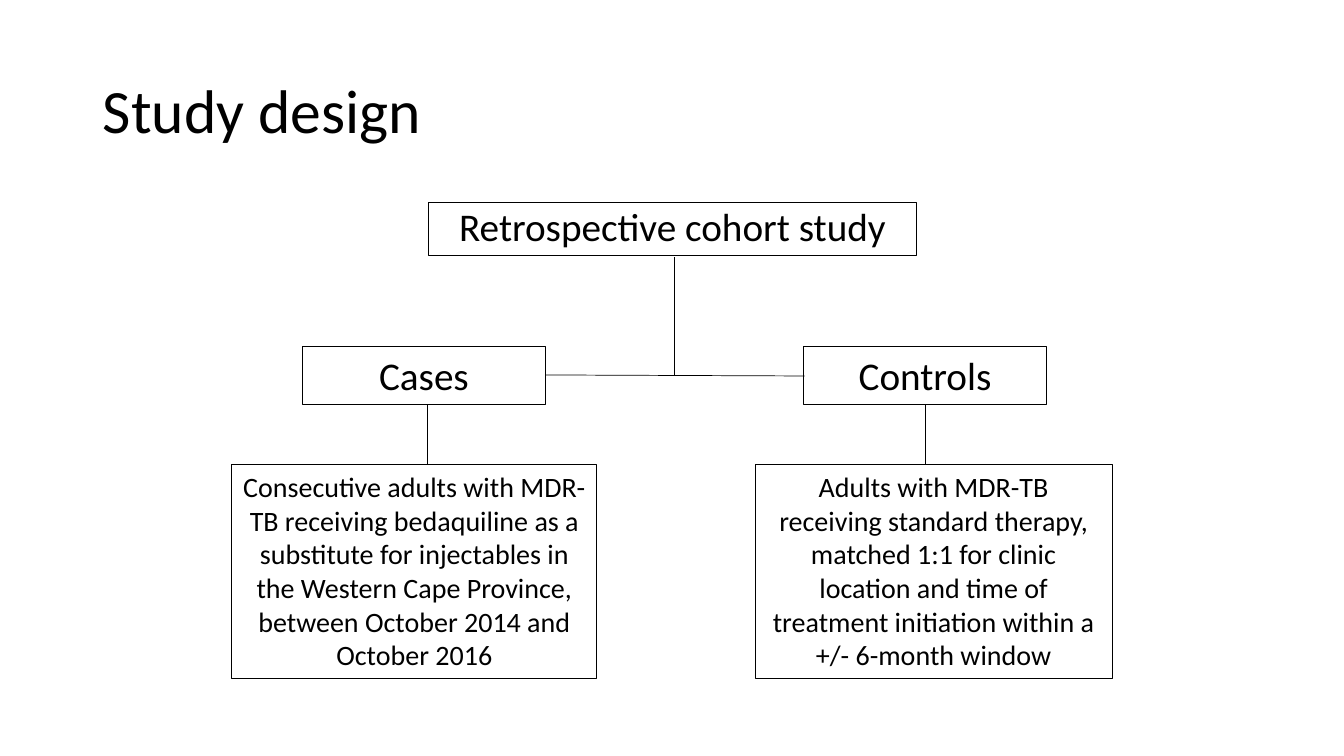
"""Build the study design slide with its cohort diagram."""
from lxml import etree
from pptx import Presentation
from pptx.dml.color import RGBColor
from pptx.enum.shapes import MSO_CONNECTOR, MSO_SHAPE
from pptx.enum.text import MSO_ANCHOR, MSO_AUTO_SIZE, PP_ALIGN
from pptx.oxml.ns import qn
from pptx.util import Inches, Pt

TITLE = "Study design"
BOXES = [
    ("Retrospective cohort study", (4.25, 2.01, 4.84, 0.53), 28, 0.9),
    ("Cases", (3, 3.44, 2.41, 0.57), 28, 1),
    ("Controls", (7.97, 3.44, 2.41, 0.57), 28, 1),
    ("Consecutive adults with MDR-TB receiving bedaquiline as a substitute for "
     "injectables in the Western Cape Province, between October 2014 and October 2016",
     (2.3, 4.61, 3.62, 2.12), 20, 1),
    ("Adults with MDR-TB receiving standard therapy, matched 1:1 for clinic location "
     "and time of treatment initiation within a +/- 6-month window",
     (7.49, 4.61, 3.54, 2.12), 20, 1),
]
LINES = [
    (7.98, 3.73, 5.41, 3.72),
    (6.69, 2.55, 6.69, 3.73),
    (4.24, 4.01, 4.24, 4.61),
    (9.18, 4.01, 9.18, 4.61),
]

FONT = "Calibri"
BLACK = RGBColor(0, 0, 0)
RECT = MSO_SHAPE.RECTANGLE
STRAIGHT = MSO_CONNECTOR.STRAIGHT
LEFT, CENTER = PP_ALIGN.LEFT, PP_ALIGN.CENTER
TOP, MIDDLE = MSO_ANCHOR.TOP, MSO_ANCHOR.MIDDLE
GROW, FIXED = MSO_AUTO_SIZE.SHAPE_TO_FIT_TEXT, MSO_AUTO_SIZE.NONE


def set_text(sp, text, size, spacing, align, anchor, fit):
    tf = sp.text_frame
    tf.text = text
    tf.word_wrap = True
    tf.auto_size = fit
    tf.vertical_anchor = anchor
    p = tf.paragraphs[0]
    p.alignment = align
    p.line_spacing = spacing
    font = p.runs[0].font
    font.name = FONT
    font.size = Pt(size)
    font.color.rgb = BLACK


def set_line(sp, width):
    sp.line.color.rgb = BLACK
    sp.line.width = Pt(width)


def add_box(slide, text, place, size, spacing):
    sp = slide.shapes.add_shape(RECT, *map(Inches, place))
    sp.shadow.inherit = False
    sp.fill.background()
    set_line(sp, 0.75)
    set_text(sp, text, size, spacing, CENTER, TOP, GROW)


def add_line(slide, ends):
    line = slide.shapes.add_connector(STRAIGHT, *map(Inches, ends))
    set_line(line, 0.5)
    etree.SubElement(line._element.spPr, qn("a:effectLst"))


def main():
    prs = Presentation()
    prs.slide_width, prs.slide_height = Inches(13.33), Inches(7.5)
    slide = prs.slides.add_slide(prs.slide_layouts[5])
    title = slide.shapes.title
    title.left, title.top = Inches(0.92), Inches(0.4)
    title.width, title.height = Inches(11.5), Inches(1.45)
    set_text(title, TITLE, 44, 0.9, LEFT, MIDDLE, FIXED)
    for box in BOXES:
        add_box(slide, *box)
    for ends in LINES:
        add_line(slide, ends)
    prs.save("out.pptx")


if __name__ == "__main__":
    main()
